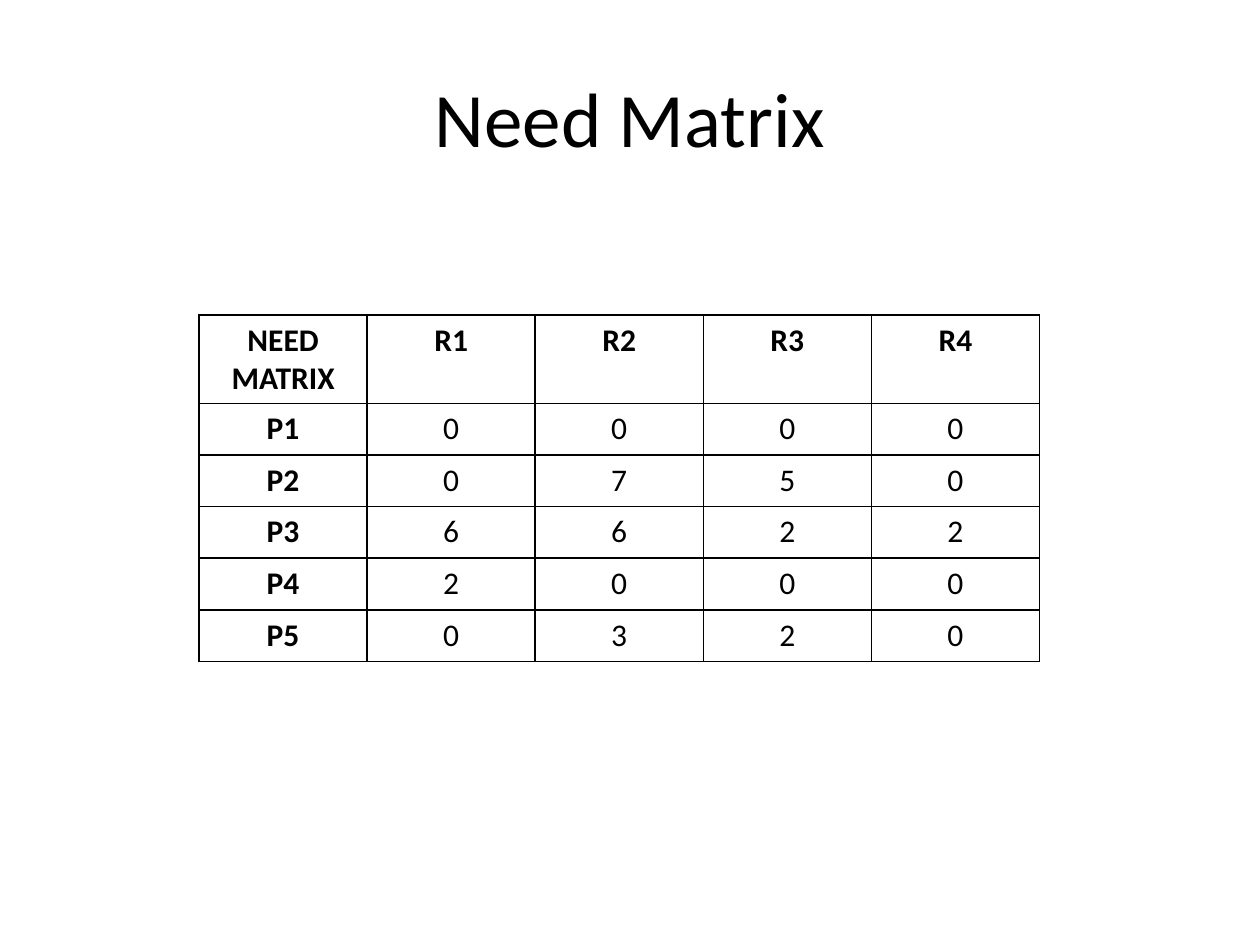
"""Build a slide with a title and the need matrix table."""
import dataclasses

import pptx
import pptx.dml.color
import pptx.enum.text
import pptx.oxml
import pptx.oxml.ns
import pptx.slide
import pptx.table
import pptx.text.text
import pptx.util

WIDTH, HEIGHT = pptx.util.Inches(10), pptx.util.Inches(7.5)
INK = "000000"
MATRIX = [
    ["NEED MATRIX", "R1", "R2", "R3", "R4"],
    ["P1", "0", "0", "0", "0"],
    ["P2", "0", "7", "5", "0"],
    ["P3", "6", "6", "2", "2"],
    ["P4", "2", "0", "0", "0"],
    ["P5", "0", "3", "2", "0"],
]


@dataclasses.dataclass(frozen=True)
class Area:
    """A rectangle in inches."""

    left: float
    top: float
    width: float
    height: float

    def lengths(self) -> list[pptx.util.Length]:
        """Return the rectangle as slide lengths."""
        return [pptx.util.Inches(side) for side in dataclasses.astuple(self)]


TITLE_AREA = Area(0.5, 0.3, 9, 1.25)
ROW_HEIGHT = 0.41
TABLE_AREA = Area(1.58, 2.5, 6.67, ROW_HEIGHT * len(MATRIX))


def color(code: str) -> pptx.dml.color.RGBColor:
    """Turn a hex string into a colour."""
    return pptx.dml.color.RGBColor.from_string(code)


def write(frame: pptx.text.text.TextFrame, text: str, size: float, bold: bool) -> None:
    """Put one centred line of text into a frame."""
    para = frame.paragraphs[0]
    para.alignment = pptx.enum.text.PP_ALIGN.CENTER
    span = para.add_run()
    span.text = text
    formats = {"name": "Calibri", "size": pptx.util.Pt(size), "bold": bold}
    for name, value in formats.items():
        setattr(span.font, name, value)
    span.font.color.rgb = color(INK)


def outline(cell: pptx.table._Cell) -> None:
    """Draw a thin line along each side of a cell."""
    properties = cell._tc.get_or_add_tcPr()
    for position, side in enumerate(("lnL", "lnR", "lnT", "lnB")):
        line = pptx.oxml.parse_xml(
            f'<a:{side} {pptx.oxml.ns.nsdecls("a")} w="{pptx.util.Pt(1)}">'
            f'<a:solidFill><a:srgbClr val="{INK}"/></a:solidFill></a:{side}>'
        )
        properties.insert(position, line)


def add_title(page: pptx.slide.Slide, text: str) -> None:
    """Add the title box."""
    box = page.shapes.add_textbox(*TITLE_AREA.lengths())
    formats = {
        "word_wrap": True,
        "vertical_anchor": pptx.enum.text.MSO_ANCHOR.MIDDLE,
    }
    for name, value in formats.items():
        setattr(box.text_frame, name, value)
    write(box.text_frame, text, 44, False)


def add_matrix(page: pptx.slide.Slide, matrix: list[list[str]]) -> None:
    """Add the table, with bold headings in its first row and column."""
    table = page.shapes.add_table(
        len(matrix), len(matrix[0]), *TABLE_AREA.lengths()
    ).table
    for name, value in {"first_row": False, "horz_banding": False}.items():
        setattr(table, name, value)
    for row, values in enumerate(matrix):
        for column, text in enumerate(values):
            cell = table.cell(row, column)
            cell.fill.background()
            outline(cell)
            write(cell.text_frame, text, 18, row == 0 or column == 0)


def main() -> None:
    """Build and save the deck."""
    deck = pptx.Presentation()
    for name, value in {"slide_width": WIDTH, "slide_height": HEIGHT}.items():
        setattr(deck, name, value)
    page = deck.slides.add_slide(deck.slide_layouts[6])
    add_title(page, "Need Matrix")
    add_matrix(page, MATRIX)
    deck.save("out.pptx")


if __name__ == "__main__":
    main()
